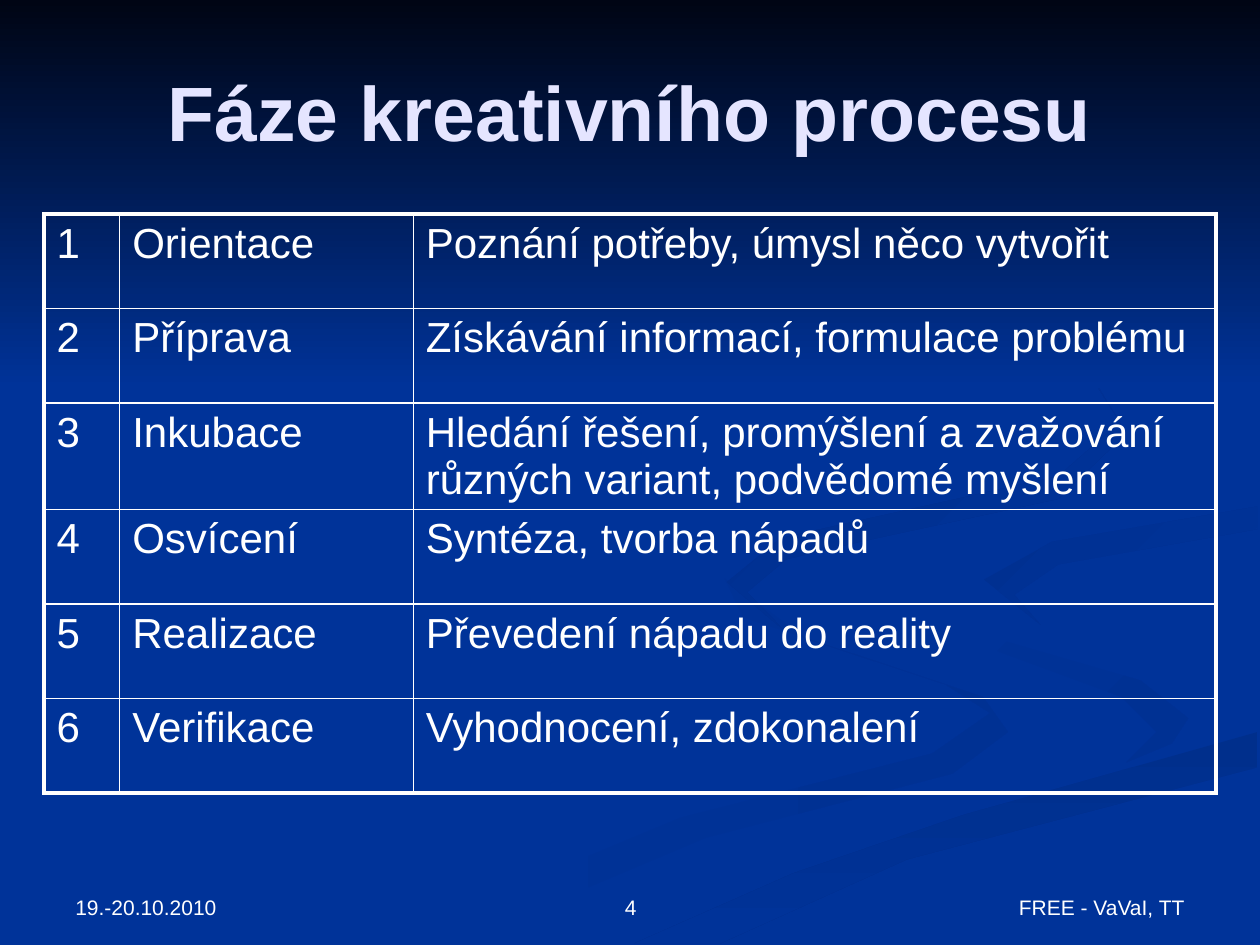
from dataclasses import dataclass

from lxml.etree import SubElement
from pptx import Presentation
from pptx.dml.color import RGBColor
from pptx.enum.shapes import MSO_SHAPE
from pptx.enum.text import MSO_ANCHOR, PP_ALIGN
from pptx.oxml.ns import qn
from pptx.util import Inches, Pt


@dataclass(frozen=True)
class Theme:
    font: str = "Arial"
    background: str = "003399"
    night: str = "000514"
    title: str = "E5E5FF"
    text: str = "FFFFFF"
    title_size: float = 44
    table_size: float = 24
    footer_size: float = 12
    outer_border: float = 2.25
    inner_border: float = 1


THEME = Theme()


@dataclass(frozen=True)
class Ribbon:
    """A background swoosh: outline in inches, colours of its gradient, clockwise angle."""
    outline: tuple
    start: str = THEME.background
    end: str = THEME.background
    angle: int = 0


@dataclass(frozen=True)
class Footer:
    text: str
    left: float
    width: float
    align: PP_ALIGN


RIBBONS = (
    Ribbon(((7.8, 5.53), (6.4, 5.07), (5.75, 4.59), (5.9, 4.9), (7.5, 5.43), (7.86, 5.66),
            (7.4, 5.98), (5.4, 6.49), (3, 7.49), (3.61, 7.49), (5.6, 6.65), (7.56, 6.14),
            (8, 5.81)), end="003193"),
    Ribbon(((9.43, 5.7), (9.05, 5.4), (7.6, 4.98), (7.24, 4.64), (7.46, 5), (8.9, 5.53),
            (9.18, 5.81), (8.94, 6.05), (9.3, 5.9)), end="003193", angle=45),
    Ribbon(((5.03, 7.49), (5.71, 7.49), (7.2, 6.82), (9.98, 6.09), (9.98, 5.81),
            (7.64, 6.47), (6.3, 6.93)), start="002F8C", angle=90),
    Ribbon(((7.81, 4.6), (8.26, 4.96), (8.05, 4.72), (8.4, 4.48), (9.98, 4.2),
            (9.98, 4.02), (8.35, 4.3)), start="003091", angle=45),
    Ribbon(((6.83, 4.3), (8.4, 3.96), (8.94, 3.44), (8.6, 2.88), (7.62, 2.33), (8.6, 2.9),
            (8.89, 3.35), (8.4, 3.78), (6.2, 4.27), (5.77, 4.62), (6.22, 5), (5.93, 4.7),
            (6.24, 4.44)), start="002F8E", angle=45),
)

FOOTERS = (
    Footer("FREE - VaVaI, TT", 7.17, 2.33, PP_ALIGN.RIGHT),
    Footer("4", 3.42, 3.17, PP_ALIGN.CENTER),
    Footer("19.-20.10.2010", 0.5, 2.33, PP_ALIGN.LEFT),
)

PHASES = (
    ("Orientace", "Poznání potřeby, úmysl něco vytvořit"),
    ("Příprava", "Získávání informací, formulace problému"),
    ("Inkubace", "Hledání řešení, promýšlení a zvažování různých variant, podvědomé myšlení"),
    ("Osvícení", "Syntéza, tvorba nápadů"),
    ("Realizace", "Převedení nápadu do reality"),
    ("Verifikace", "Vyhodnocení, zdokonalení"),
)
COLUMN_WIDTHS = (0.6, 2.33, 6.37)
ROW_HEIGHT = 0.75


def write(frame, text: str, size: float, color: str = THEME.text,
          align: PP_ALIGN = PP_ALIGN.LEFT, bold: bool = False) -> None:
    paragraph = frame.paragraphs[0]
    paragraph.alignment = align
    run = paragraph.add_run()
    run.text = text
    run.font.color.rgb = RGBColor.from_string(color)
    for name, value in {"name": THEME.font, "size": Pt(size), "bold": bold}.items():
        setattr(run.font, name, value)


def shade(shape, start: str, end: str, angle: int) -> None:
    """Fill with a two-colour gradient at a clockwise angle, without outline or shadow."""
    shape.shadow.inherit = False
    shape.line.fill.background()
    shape.fill.gradient()
    shape.fill.gradient_angle = -angle % 360
    for stop, color in zip(shape.fill.gradient_stops, (start, end)):
        stop.color.rgb = RGBColor.from_string(color)


def draw_ribbon(slide, ribbon: Ribbon) -> None:
    points = [(Inches(x), Inches(y)) for x, y in ribbon.outline]
    builder = slide.shapes.build_freeform(*points[0])
    builder.add_line_segments(points[1:], close=True)
    shade(builder.convert_to_shape(), ribbon.start, ribbon.end, ribbon.angle)


def draw_night_sky(slide) -> None:
    sky = slide.shapes.add_shape(MSO_SHAPE.RECTANGLE, 0, 0, Inches(10), Inches(3.08))
    shade(sky, THEME.night, THEME.background, 90)


def draw_title(slide, text: str) -> None:
    """Fill the title placeholder and raise it above the background shapes."""
    title = slide.shapes.title
    box = {"left": 0.75, "top": 0.44, "width": 8.5, "height": 0.88}
    for name, value in box.items():
        setattr(title, name, Inches(value))
    title.text_frame.vertical_anchor = MSO_ANCHOR.MIDDLE
    write(title.text_frame, text, THEME.title_size, THEME.title, PP_ALIGN.CENTER, True)
    title.element.getparent().append(title.element)


def draw_footer(slide, footer: Footer) -> None:
    frame = slide.shapes.add_textbox(Inches(footer.left), Inches(6.83),
                                     Inches(footer.width), Inches(0.52)).text_frame
    frame.word_wrap = True
    frame.vertical_anchor = MSO_ANCHOR.BOTTOM
    write(frame, footer.text, THEME.footer_size, align=footer.align)


def set_borders(cell, outer_sides: dict) -> None:
    """Rule all four sides, thicker where the side lies on the table's edge."""
    properties = cell._tc.get_or_add_tcPr()
    for side, is_outer in outer_sides.items():
        width = THEME.outer_border if is_outer else THEME.inner_border
        rule = SubElement(properties, qn(f"a:ln{side}"), w=str(Pt(width)))
        SubElement(SubElement(rule, qn("a:solidFill")), qn("a:srgbClr"), val=THEME.text)


def draw_phases(slide) -> None:
    rows, columns = len(PHASES), len(COLUMN_WIDTHS)
    table = slide.shapes.add_table(rows, columns, Inches(0.35), Inches(1.7),
                                   Inches(sum(COLUMN_WIDTHS)), Inches(rows * ROW_HEIGHT)).table
    table.first_row = table.horz_banding = False
    for column, width in zip(table.columns, COLUMN_WIDTHS):
        column.width = Inches(width)
    for r, phase in enumerate(PHASES):
        table.rows[r].height = Inches(ROW_HEIGHT)
        for c, text in enumerate((str(r + 1), *phase)):
            cell = table.cell(r, c)
            set_borders(cell, {"L": c == 0, "R": c == columns - 1,
                               "T": r == 0, "B": r == rows - 1})
            cell.fill.background()
            write(cell.text_frame, text, THEME.table_size)


def main() -> None:
    deck = Presentation()
    deck.slide_width, deck.slide_height = Inches(10), Inches(7.5)
    slide = deck.slides.add_slide(deck.slide_layouts[5])
    slide.background.fill.solid()
    slide.background.fill.fore_color.rgb = RGBColor.from_string(THEME.background)
    for ribbon in RIBBONS:
        draw_ribbon(slide, ribbon)
    draw_night_sky(slide)
    draw_title(slide, "Fáze kreativního procesu")
    draw_phases(slide)
    for footer in FOOTERS:
        draw_footer(slide, footer)
    deck.save("out.pptx")


if __name__ == "__main__":
    main()
